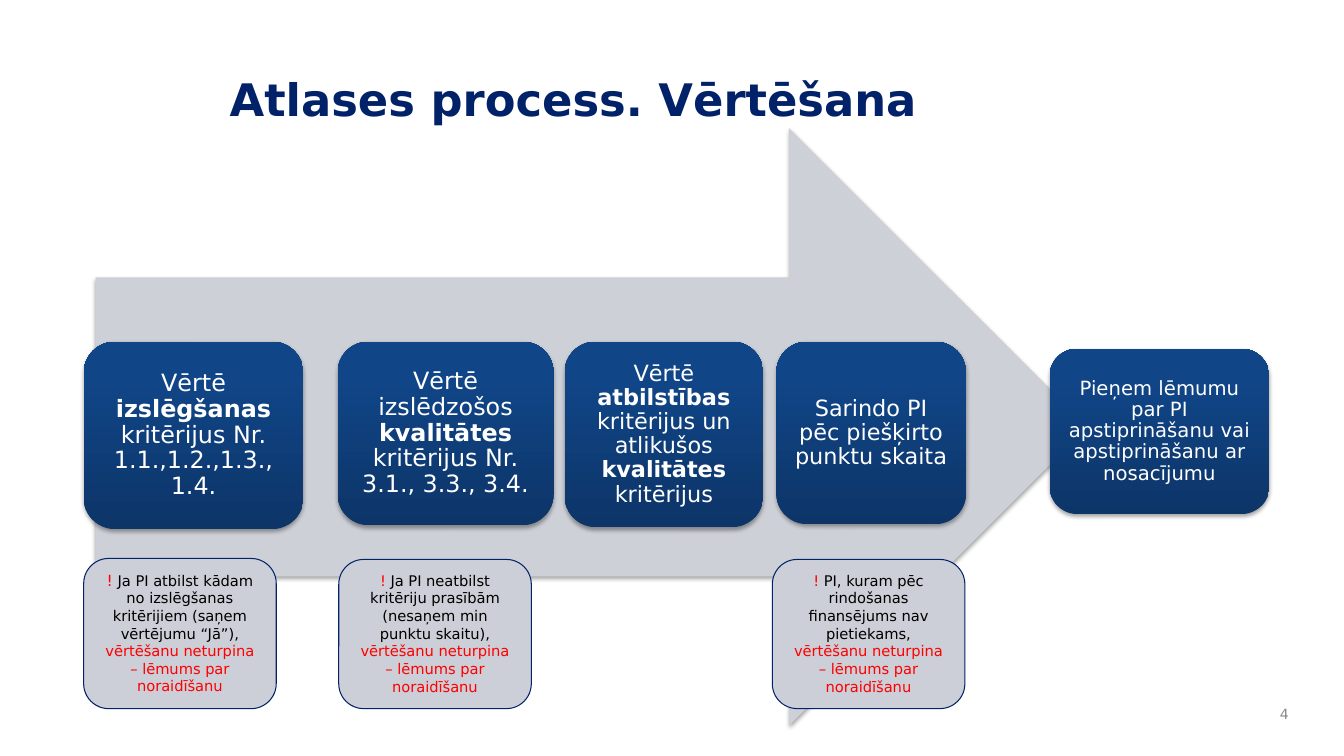
from dataclasses import dataclass

from pptx import Presentation
from pptx.dml.color import RGBColor
from pptx.enum.shapes import MSO_SHAPE as Shape
from pptx.enum.text import MSO_ANCHOR as Anchor, MSO_AUTO_SIZE as AutoSize, PP_ALIGN as Align
from pptx.oxml import parse_xml
from pptx.oxml.ns import nsdecls, qn
from pptx.util import Inches, Pt


@dataclass(frozen=True)
class Theme:
    font: str = "DejaVu Sans"
    navy: str = "012269"
    white: str = "FFFFFF"
    black: str = "000000"
    red: str = "FF0000"
    grey: str = "898989"
    arrow: str = "CDD0D7"
    note: str = "CCCFD7"
    gradient: tuple = ((0, "0D3568"), (80, "104587"), (100, "0E458A"))
    title_size: float = 32
    note_size: float = 10.5
    number_size: float = 10


THEME = Theme()

# Each step: box, type size, inset, runs as (text, bold)
STEPS = [
    ((0.83, 3.39, 2.18, 1.86), 17, 0.07,
     [("Vērtē ", False), ("izslēgšanas", True),
      (" kritērijus Nr. 1.1.,1.2.,1.3., 1.4.", False)]),
    ((3.35, 3.39, 2.14, 1.82), 17, 0.07,
     [("Vērtē izslēdzošos ", False), ("kvalitātes", True),
      (" kritērijus Nr. 3.1., 3.3., 3.4.", False)]),
    ((5.6, 3.39, 1.97, 1.84), 16, 0.07,
     [("Vērtē ", False), ("atbilstības ", True), ("kritērijus un atlikušos ", False),
      ("kvalitātes ", True), ("kritērijus", False)]),
    ((7.7, 3.39, 1.88, 1.81), 16, 0.07,
     [("Sarindo PI pēc piešķirto punktu skaita", False)]),
    ((10.41, 3.46, 2.18, 1.64), 14, 0.06,
     [("Pieņem lēmumu par PI apstiprināšanu vai apstiprināšanu ar nosacījumu", False)]),
]

# Each note: box, size of the exclamation mark, condition
NOTES = [
    ((0.83, 5.54, 1.91, 1.49), 11,
     "Ja PI atbilst kādam no izslēgšanas kritērijiem (saņem vērtējumu “Jā”), "),
    ((3.36, 5.55, 1.91, 1.48), THEME.note_size,
     "Ja PI neatbilst kritēriju prasībām (nesaņem min punktu skaitu), "),
    ((7.66, 5.55, 1.91, 1.48), THEME.note_size,
     "PI, kuram pēc rindošanas finansējums nav pietiekams, "),
]
REJECTION = "vērtēšanu neturpina – lēmums par noraidīšanu"


def place(box):
    return [Inches(length) for length in box]


def add_run(paragraph, text, size, color, bold=False):
    run = paragraph.add_run()
    run.text = text
    run.font.name = THEME.font
    run.font.size = Pt(size)
    run.font.bold = bold
    run.font.color.rgb = RGBColor.from_string(color)


def add_text(slide, box, text, size, color, bold=False, align=Align.LEFT, anchor=Anchor.TOP):
    frame = slide.shapes.add_textbox(*place(box)).text_frame
    frame.word_wrap = True
    frame.vertical_anchor = anchor
    paragraph = frame.paragraphs[0]
    paragraph.alignment = align
    add_run(paragraph, text, size, color, bold)


def add_filled(slide, kind, box, color):
    shape = slide.shapes.add_shape(kind, *place(box))
    shape.shadow.inherit = False
    shape.fill.solid()
    shape.fill.fore_color.rgb = RGBColor.from_string(color)
    shape.line.fill.background()
    return shape


def add_soft_shadow(shape):
    effects = shape._element.spPr.find(qn("a:effectLst"))
    effects.append(parse_xml(
        f'<a:outerShdw {nsdecls("a")} blurRad="{Pt(3.1)}" dist="{Pt(1.8)}" dir="5400000" '
        'rotWithShape="0"><a:srgbClr val="000000"><a:alpha val="35000"/></a:srgbClr>'
        '</a:outerShdw>'))


def set_gradient(shape):
    stops = "".join(f'<a:gs pos="{position * 1000}"><a:srgbClr val="{color}"/></a:gs>'
                    for position, color in THEME.gradient)
    properties = shape._element.spPr
    properties.replace(properties.find(qn("a:solidFill")), parse_xml(
        f'<a:gradFill {nsdecls("a")} rotWithShape="1"><a:gsLst>{stops}</a:gsLst>'
        '<a:lin ang="16200000" scaled="0"/></a:gradFill>'))


def add_arrow(slide, box):
    add_soft_shadow(add_filled(slide, Shape.RIGHT_ARROW, box, THEME.arrow))


def add_step(slide, box, size, inset, runs):
    shape = add_filled(slide, Shape.ROUNDED_RECTANGLE, box, THEME.navy)
    set_gradient(shape)
    add_soft_shadow(shape)
    frame = shape.text_frame
    frame.word_wrap = True
    frame.vertical_anchor = Anchor.MIDDLE
    frame.margin_left = frame.margin_right = Inches(inset)
    frame.margin_top = frame.margin_bottom = Inches(inset)
    paragraph = frame.paragraphs[0]
    paragraph.alignment = Align.CENTER
    paragraph.line_spacing = 0.9
    for text, bold in runs:
        add_run(paragraph, text, size, THEME.white, bold)


def add_note(slide, box, mark_size, condition):
    shape = add_filled(slide, Shape.ROUNDED_RECTANGLE, box, THEME.note)
    shape.line.color.rgb = RGBColor.from_string(THEME.navy)
    shape.line.width = Pt(0.75)
    frame = shape.text_frame
    frame.word_wrap = True
    frame.auto_size = AutoSize.SHAPE_TO_FIT_TEXT
    frame.vertical_anchor = Anchor.TOP
    paragraph = frame.paragraphs[0]
    paragraph.alignment = Align.CENTER
    add_run(paragraph, "! ", mark_size, THEME.red)
    add_run(paragraph, condition, THEME.note_size, THEME.black)
    add_run(paragraph, REJECTION, THEME.note_size, THEME.red)


def main():
    presentation = Presentation()
    presentation.slide_width = Inches(13.33)
    presentation.slide_height = Inches(7.5)
    slide = presentation.slides.add_slide(presentation.slide_layouts[6])

    # Process arrow with its steps
    add_arrow(slide, (0.95, 1.27, 9.84, 5.93))
    for step in STEPS:
        add_step(slide, *step)

    # Rejection notes under the steps
    for note in NOTES:
        add_note(slide, *note)

    # Title and slide number
    add_text(slide, (2.18, 0.66, 9.64, 0.85), "Atlases process. Vērtēšana",
             THEME.title_size, THEME.navy, bold=True)
    add_text(slide, (12.44, 6.92, 0.44, 0.33), "4", THEME.number_size, THEME.grey,
             align=Align.RIGHT, anchor=Anchor.MIDDLE)

    presentation.save("out.pptx")


if __name__ == "__main__":
    main()
